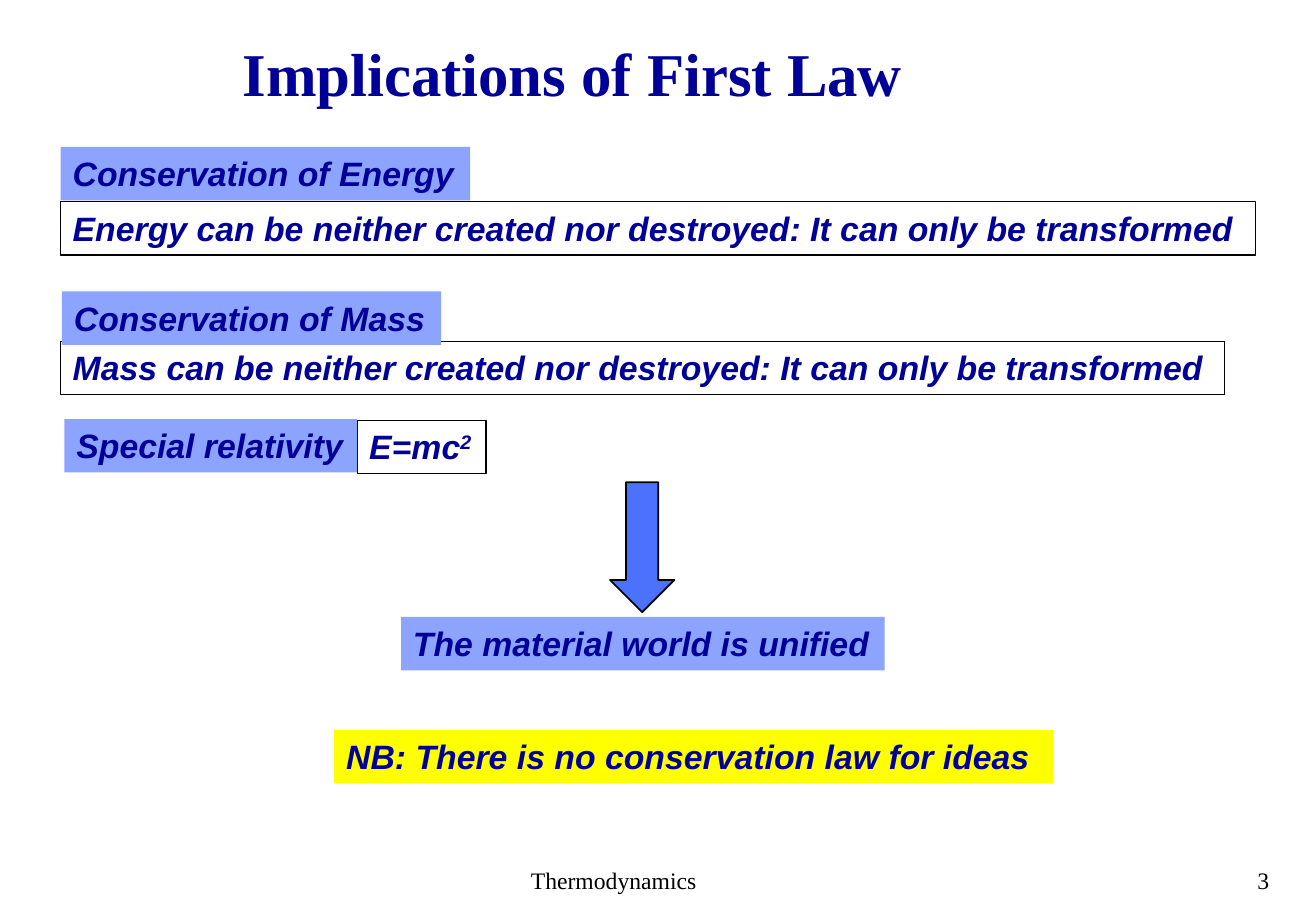
"""Build the slide on the implications of the first law of thermodynamics."""
from pptx import Presentation
from pptx.dml.color import RGBColor
from pptx.enum import shapes, text
from pptx.util import Inches, Pt

NAVY = RGBColor(0x00, 0x00, 0x99)
BLACK = RGBColor(0x00, 0x00, 0x00)
PERIWINKLE = RGBColor(0x8C, 0xA4, 0xFD)
BLUE = RGBColor(0x4B, 0x71, 0xFD)
YELLOW = RGBColor(0xFF, 0xFF, 0x00)
SERIF, SANS = "Times New Roman", "Arial"

BOX_HEIGHT = 0.44
TITLE = ("Implications of First Law", (1.77, 0.31, 5.88, 0.64))
FOOTERS = [
    ("Thermodynamics", (4.27, 7.08, 1.58, 0.34)),
    ("3", (10.25, 7.08, 0.43, 0.33)),
]
STATEMENTS = [
    ("Energy can be neither created nor destroyed: It can only be transformed", "", 0.5, 1.66, 9.83),
    ("Mass can be neither created nor destroyed: It can only be transformed", "", 0.5, 2.81, 9.58),
    ("E=mc", "2", 2.94, 3.46, 1.06),
]
LABELS = [
    ("Conservation of Energy", 0.5, 1.21, 3.37, PERIWINKLE),
    ("Conservation of Mass", 0.51, 2.4, 3.12, PERIWINKLE),
    ("Special relativity", 0.53, 3.45, 2.41, PERIWINKLE),
    ("The material world is unified", 3.3, 5.08, 3.98, PERIWINKLE),
    ("NB: There is no conservation law for ideas", 2.75, 6.01, 5.92, YELLOW),
]
ARROW = (5.02, 3.97, 0.53, 1.07)


def add_run(p, words, size, font, color, bold=False, italic=False):
    r = p.add_run()
    r.text = words
    r.font.size, r.font.name = Pt(size), font
    r.font.bold, r.font.italic = bold, italic
    r.font.color.rgb = color
    return r


def add_text(s, words, place, size, color, bold=False):
    tf = s.shapes.add_textbox(*map(Inches, place)).text_frame
    tf.word_wrap = True
    tf.margin_right = 0
    p = tf.paragraphs[0]
    add_run(p, words, size, SERIF, color, bold)
    return tf


def add_shape(s, kind, place, fill=None, line_width=None):
    sp = s.shapes.add_shape(kind, *map(Inches, place))
    sp.shadow.inherit = False
    if fill is None:
        sp.fill.background()
    else:
        sp.fill.solid()
        sp.fill.fore_color.rgb = fill
    if line_width is None:
        sp.line.fill.background()
    else:
        sp.line.color.rgb = BLACK
        sp.line.width = Pt(line_width)
    return sp


def add_box(s, words, power, left, top, width, fill=None, line_width=None):
    sp = add_shape(s, shapes.MSO_SHAPE.RECTANGLE, (left, top, width, BOX_HEIGHT), fill, line_width)
    tf = sp.text_frame
    tf.word_wrap = True
    tf.margin_right = 0
    tf.vertical_anchor = text.MSO_ANCHOR.TOP
    p = tf.paragraphs[0]
    p.alignment = text.PP_ALIGN.LEFT
    add_run(p, words, 20, SANS, NAVY, True, True)
    if power:
        r = add_run(p, power, 20, SANS, NAVY, True, True)
        r.font._element.set("baseline", "30000")


def main():
    prs = Presentation()
    prs.slide_width, prs.slide_height = Inches(10.83), Inches(7.5)
    s = prs.slides.add_slide(prs.slide_layouts[6])

    for words, place in FOOTERS:
        add_text(s, words, place, 14, BLACK)

    tf = add_text(s, *TITLE, 36, NAVY, True)
    tf.margin_right = Inches(0.1)
    tf.vertical_anchor = text.MSO_ANCHOR.MIDDLE
    tf.paragraphs[0].alignment = text.PP_ALIGN.CENTER
    tf.paragraphs[0].line_spacing = 0.9

    for words, power, left, top, width in STATEMENTS:
        add_box(s, words, power, left, top, width, line_width=0.75)
    for words, left, top, width, fill in LABELS:
        add_box(s, words, "", left, top, width, fill)
    add_shape(s, shapes.MSO_SHAPE.DOWN_ARROW, ARROW, BLUE, 1)

    prs.save("out.pptx")


if __name__ == "__main__":
    main()
